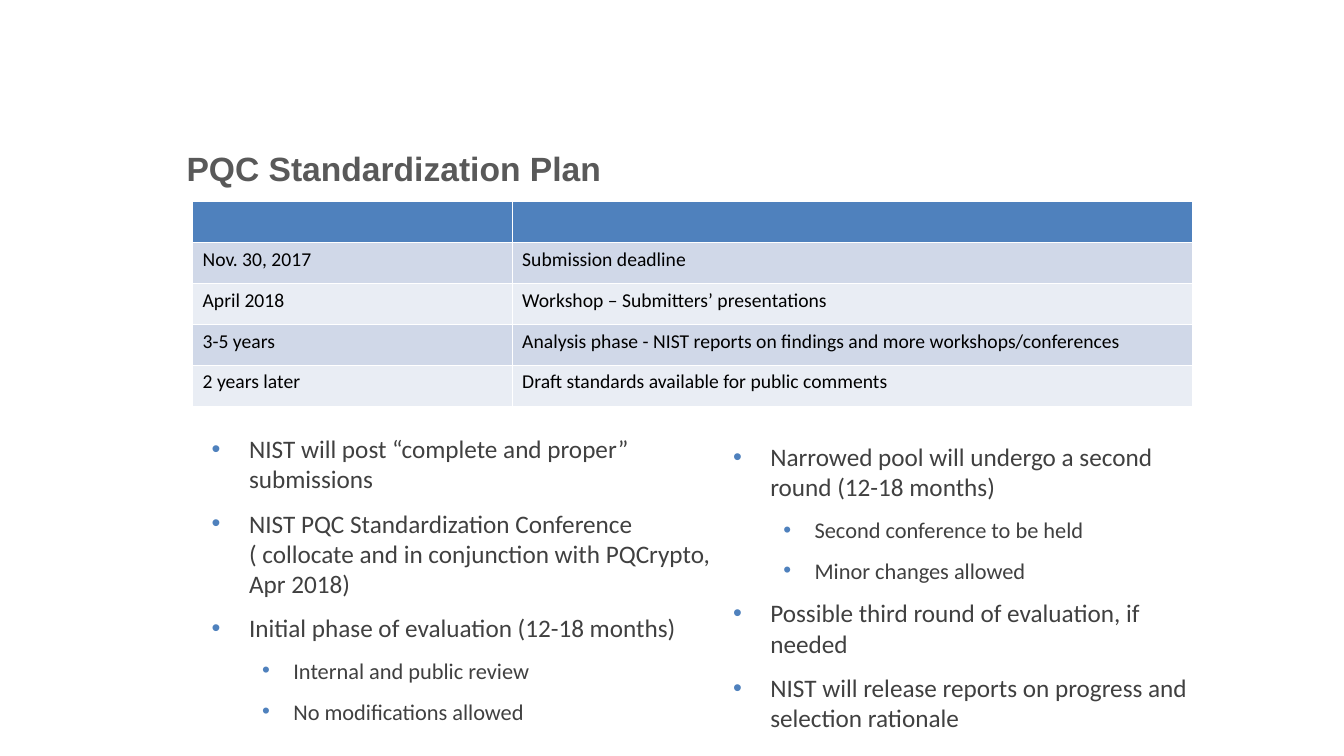
from dataclasses import dataclass

import lxml.etree
import pptx
import pptx.dml.color
import pptx.enum.text
import pptx.oxml.ns
import pptx.shapes.placeholder
import pptx.slide
import pptx.text.text
import pptx.util

Inches = pptx.util.Inches
Pt = pptx.util.Pt


@dataclass(frozen=True)
class Theme:
    title_font: str = "Arial"
    body_font: str = "Calibri"
    title_color: str = "595959"
    body_color: str = "404040"
    table_color: str = "000000"
    accent: str = "4F81BD"
    bands: tuple[str, str] = ("D0D8E8", "E9EDF4")
    title_size: int = 24
    title_line: int = 26
    table_size: int = 14
    bullet_sizes: tuple[int, int] = (18, 16)
    bullet_gap: int = 10


@dataclass(frozen=True)
class Box:
    left: float
    top: float
    width: float
    height: float


@dataclass(frozen=True)
class Bullet:
    text: str
    level: int = 0


@dataclass(frozen=True)
class BulletColumn:
    placeholder_index: int
    box: Box
    bullets: tuple[Bullet, ...]


@dataclass(frozen=True)
class Milestone:
    date: str
    event: str


THEME = Theme()
BULLET_INDENTS = ((0.37, -0.37), (0.81, -0.31))
TITLE_BOX = Box(1.75, 0.73, 10.29, 1.19)
TABLE_BOX = Box(1.91, 2, 9.92, 2.03)
TABLE_COLUMN_WIDTHS = (3.17, 6.75)

MILESTONES = (
    Milestone("Nov. 30, 2017", "Submission deadline"),
    Milestone("April 2018", "Workshop – Submitters’ presentations"),
    Milestone("3-5 years", "Analysis phase - NIST reports on findings and more workshops/conferences"),
    Milestone("2 years later", "Draft standards available for public comments"),
)

BULLET_COLUMNS = (
    BulletColumn(1, Box(2, 4.25, 5.17, 2.92), (
        Bullet("NIST will post “complete and proper” submissions"),
        Bullet("NIST PQC Standardization Conference ( collocate and in conjunction with PQCrypto, Apr 2018)"),
        Bullet("Initial phase of evaluation (12-18 months)"),
        Bullet("Internal and public review", 1),
        Bullet("No modifications allowed", 1),
    )),
    BulletColumn(2, Box(7.17, 4.33, 4.83, 2.83), (
        Bullet("Narrowed pool will undergo a second round (12-18 months)"),
        Bullet("Second conference to be held", 1),
        Bullet("Minor changes allowed", 1),
        Bullet("Possible third round of evaluation, if needed"),
        Bullet("NIST will release reports on progress and selection rationale"),
    )),
)


def rgb(color: str) -> pptx.dml.color.RGBColor:
    return pptx.dml.color.RGBColor.from_string(color)


def format_runs(paragraph: pptx.text.text._Paragraph, font: str, size: int, color: str, bold: bool = False) -> None:
    for run in paragraph.runs:
        run.font.name = font
        run.font.size = Pt(size)
        run.font.bold = bold
        run.font.color.rgb = rgb(color)


def place(shape: pptx.shapes.placeholder.SlidePlaceholder, box: Box) -> None:
    shape.left, shape.top = Inches(box.left), Inches(box.top)
    shape.width, shape.height = Inches(box.width), Inches(box.height)
    shape.text_frame.word_wrap = True
    shape.text_frame.auto_size = pptx.enum.text.MSO_AUTO_SIZE.NONE


def add_bullet_mark(paragraph: pptx.text.text._Paragraph, level: int) -> None:
    margin, indent = BULLET_INDENTS[level]
    properties = paragraph._p.get_or_add_pPr()
    properties.set("marL", str(Inches(margin)))
    properties.set("indent", str(Inches(indent)))
    qualified = pptx.oxml.ns.qn
    bullet_color = lxml.etree.SubElement(properties, qualified("a:buClr"))
    lxml.etree.SubElement(bullet_color, qualified("a:srgbClr"), val=THEME.accent)
    lxml.etree.SubElement(properties, qualified("a:buFont"), typeface="Arial")
    lxml.etree.SubElement(properties, qualified("a:buChar"), char="•")


def draw_title(slide: pptx.slide.Slide) -> None:
    title = slide.shapes.title
    place(title, TITLE_BOX)
    title.text_frame.text = "PQC Standardization Plan"
    title.text_frame.vertical_anchor = pptx.enum.text.MSO_ANCHOR.BOTTOM
    paragraph = title.text_frame.paragraphs[0]
    paragraph.alignment = pptx.enum.text.PP_ALIGN.LEFT
    paragraph.line_spacing = Pt(THEME.title_line)
    format_runs(paragraph, THEME.title_font, THEME.title_size, THEME.title_color, bold=True)


def draw_milestones(slide: pptx.slide.Slide) -> None:
    table = slide.shapes.add_table(
        len(MILESTONES) + 1, len(TABLE_COLUMN_WIDTHS),
        Inches(TABLE_BOX.left), Inches(TABLE_BOX.top),
        Inches(TABLE_BOX.width), Inches(TABLE_BOX.height),
    ).table
    for column, width in zip(table.columns, TABLE_COLUMN_WIDTHS):
        column.width = Inches(width)
    rows = [("", "")] + [(milestone.date, milestone.event) for milestone in MILESTONES]
    for row_index, texts in enumerate(rows):
        fill = THEME.bands[(row_index - 1) % 2] if row_index else THEME.accent
        for column_index, text in enumerate(texts):
            cell = table.cell(row_index, column_index)
            cell.fill.solid()
            cell.fill.fore_color.rgb = rgb(fill)
            if text:
                cell.text_frame.text = text
                format_runs(cell.text_frame.paragraphs[0], THEME.body_font, THEME.table_size, THEME.table_color)


def draw_bullets(slide: pptx.slide.Slide, column: BulletColumn) -> None:
    shape = slide.placeholders[column.placeholder_index]
    place(shape, column.box)
    frame = shape.text_frame
    frame.vertical_anchor = pptx.enum.text.MSO_ANCHOR.TOP
    for index, bullet in enumerate(column.bullets):
        paragraph = frame.add_paragraph() if index else frame.paragraphs[0]
        paragraph.text = bullet.text
        paragraph.level = bullet.level
        add_bullet_mark(paragraph, bullet.level)
        paragraph.space_before = Pt(THEME.bullet_gap if index else 0)
        format_runs(paragraph, THEME.body_font, THEME.bullet_sizes[bullet.level], THEME.body_color)


def main() -> None:
    presentation = pptx.Presentation()
    presentation.slide_width = Inches(13.33)
    presentation.slide_height = Inches(7.5)
    two_content_layout = presentation.slide_layouts[3]
    slide = presentation.slides.add_slide(two_content_layout)
    draw_title(slide)
    draw_milestones(slide)
    for column in BULLET_COLUMNS:
        draw_bullets(slide, column)
    presentation.save("out.pptx")


if __name__ == "__main__":
    main()
